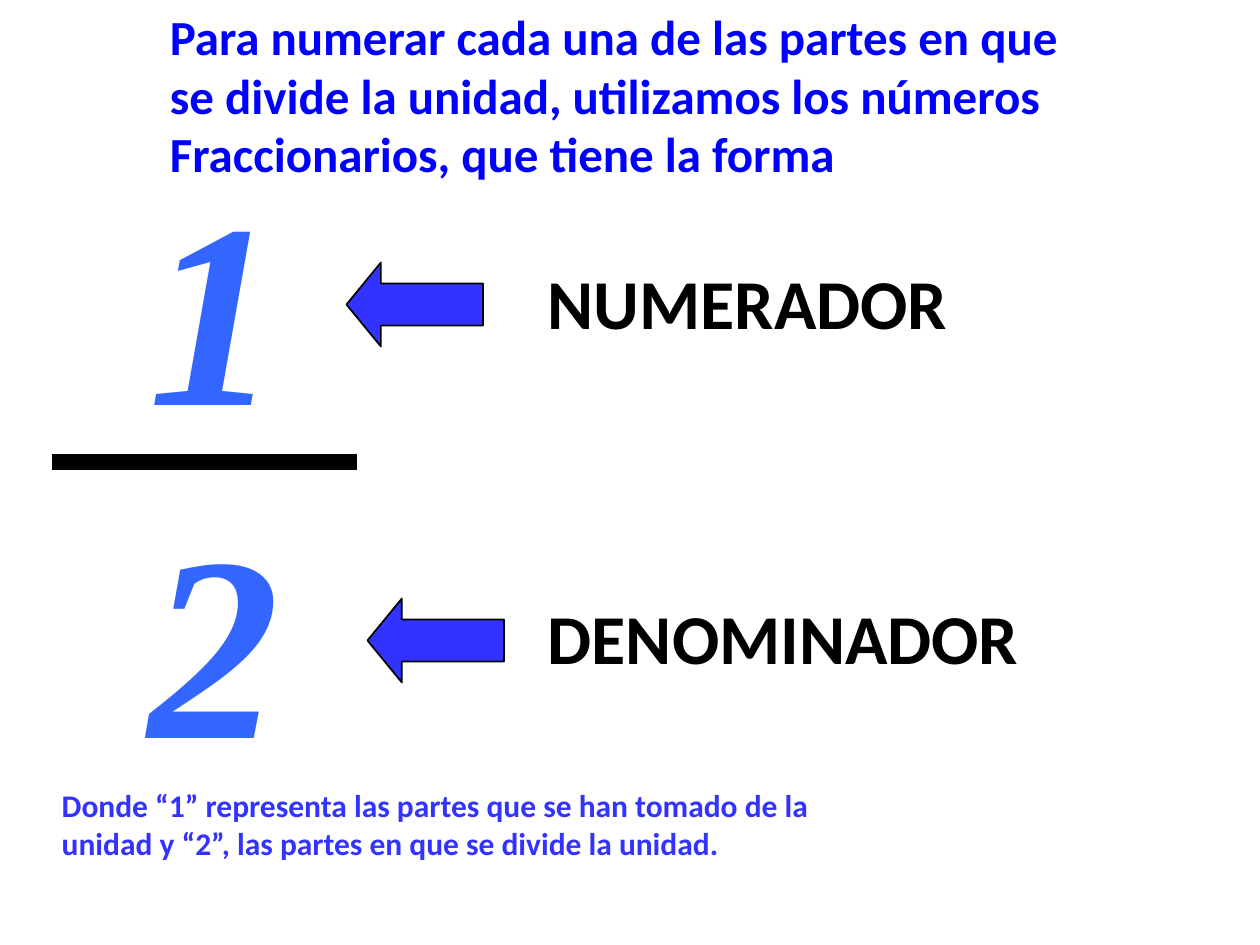
from dataclasses import dataclass

import pptx
import pptx.dml.color
import pptx.enum.shapes
import pptx.enum.text
import pptx.oxml
import pptx.oxml.ns
import pptx.util

COLORS = {
    "intro": "0000FF",
    "digit": "3366FF",
    "accent": "3333FF",
    "ink": "000000",
}
WIDTH, HEIGHT = pptx.util.Inches(10), pptx.util.Inches(7.5)
COLUMNS, ROWS = 24, 18


@dataclass(frozen=True)
class Area:
    column: float
    row: float
    columns: float
    rows: float


@dataclass(frozen=True)
class Term:
    digit: str
    label: str
    digit_row: float
    arrow_column: float
    arrow_row: float
    label_row: float
    label_columns: float


TERMS = (
    Term("1", "NUMERADOR", 2.6, 6.6, 5, 4.82, 9.26),
    Term("2", "DENOMINADOR", 8.95, 7, 11.4, 11.2, 11.28),
)


def x(columns: float) -> int:
    return round(WIDTH * columns / COLUMNS)


def y(rows: float) -> int:
    return round(HEIGHT * rows / ROWS)


def place(area: Area) -> tuple[int, int, int, int]:
    return x(area.column), y(area.row), x(area.columns), y(area.rows)


def rgb(name: str) -> pptx.dml.color.RGBColor:
    return pptx.dml.color.RGBColor.from_string(COLORS[name])


def add_text(slide, text: str, area: Area, *, size: float, color: str,
             font: str = "Calibri", italic: bool = False, wrap: bool = False) -> None:
    frame = slide.shapes.add_textbox(*place(area)).text_frame
    frame.word_wrap = wrap
    frame.auto_size = pptx.enum.text.MSO_AUTO_SIZE.SHAPE_TO_FIT_TEXT
    frame.text = text
    for paragraph in frame.paragraphs:
        for run in paragraph.runs:
            run.font.name = font
            run.font.size = pptx.util.Pt(size)
            run.font.bold = True
            run.font.italic = italic
            run.font.color.rgb = rgb(color)


def add_arrow(slide, area: Area) -> None:
    arrow = slide.shapes.add_shape(
        pptx.enum.shapes.MSO_SHAPE.LEFT_ARROW, *place(area))
    arrow.adjustments[0] = 0.5
    arrow.adjustments[1] = 0.41
    arrow.shadow.inherit = False
    arrow.fill.solid()
    arrow.fill.fore_color.rgb = rgb("accent")
    arrow.line.color.rgb = rgb("ink")
    arrow.line.width = pptx.util.Pt(1)


def add_fraction_bar(slide, start: float, end: float, row: float) -> None:
    bar = slide.shapes.add_connector(
        pptx.enum.shapes.MSO_CONNECTOR.STRAIGHT, x(start), y(row), x(end), y(row))
    bar.line.color.rgb = rgb("ink")
    bar.line.width = pptx.util.Pt(9)
    properties = bar.element.find(pptx.oxml.ns.qn("p:spPr"))
    properties.append(pptx.oxml.parse_xml(
        f"<a:effectLst {pptx.oxml.ns.nsdecls('a')}/>"))


def add_term(slide, term: Term) -> None:
    add_text(slide, term.digit, Area(2.6, term.digit_row, 3, 6.3),
             size=150, color="digit", font="Times New Roman", italic=True)
    add_arrow(slide, Area(term.arrow_column, term.arrow_row, 2.6, 1.6))
    add_text(slide, term.label, Area(10.2, term.label_row, term.label_columns, 1.85),
             size=40, color="ink")


def main() -> None:
    deck = pptx.Presentation()
    deck.slide_width, deck.slide_height = WIDTH, HEIGHT
    slide = deck.slides.add_slide(deck.slide_layouts[6])
    add_text(slide,
             "Para numerar cada una de las partes en que se divide la unidad, "
             "utilizamos los números Fraccionarios, que tiene la forma",
             Area(3, 0, 18, 6.4), size=28, color="intro", wrap=True)
    add_fraction_bar(slide, 1, 6.8, 8.8)
    for term in TERMS:
        add_term(slide, term)
    add_text(slide,
             "Donde “1” representa las partes que se han tomado de la\n"
             "unidad y “2”, las partes en que se divide la unidad.",
             Area(0.94, 14.86, 14.98, 1.7), size=18, color="accent")
    deck.save("out.pptx")


if __name__ == "__main__":
    main()
